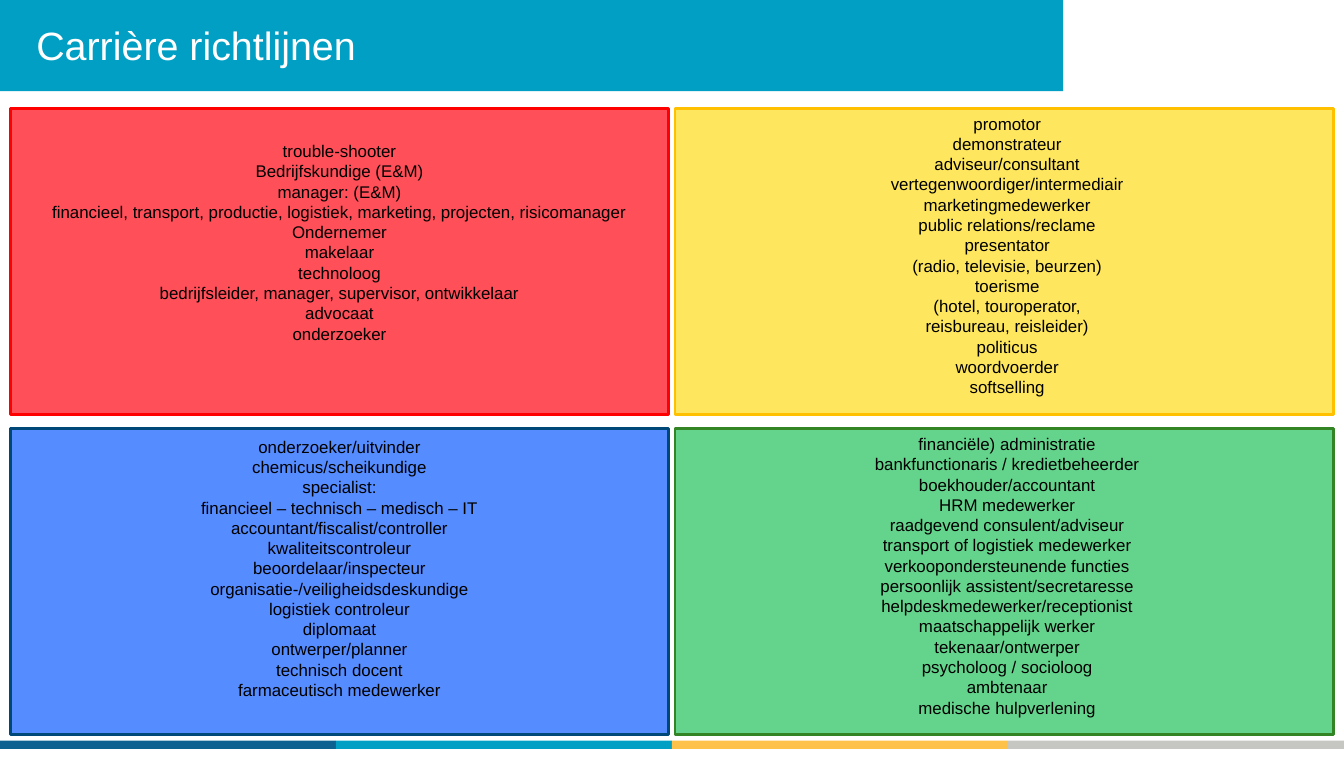
from pptx import Presentation
from pptx.dml.color import RGBColor
from pptx.enum.shapes import MSO_SHAPE as Preset
from pptx.enum.text import MSO_ANCHOR as Anchor, PP_ALIGN as Align
from pptx.util import Pt

WHITE = RGBColor(0xFF, 0xFF, 0xFF)
BLACK = RGBColor(0x00, 0x00, 0x00)
TEAL = RGBColor(0x00, 0x9F, 0xC3)
NAVY = RGBColor(0x0D, 0x61, 0x90)
AMBER = RGBColor(0xFE, 0xC2, 0x4A)
GRAY = RGBColor(0xC6, 0xC6, 0xC3)
RED_FILL = RGBColor(0xFF, 0x4F, 0x59)
RED_LINE = RGBColor(0xFF, 0x00, 0x00)
YELLOW_FILL = RGBColor(0xFE, 0xE7, 0x5E)
YELLOW_LINE = RGBColor(0xFF, 0xC0, 0x00)
BLUE_FILL = RGBColor(0x55, 0x8C, 0xFF)
BLUE_LINE = RGBColor(0x00, 0x48, 0x77)
GREEN_FILL = RGBColor(0x64, 0xD4, 0x8C)
GREEN_LINE = RGBColor(0x32, 0x84, 0x24)

FONT = "Arial"
SLIDE_WIDTH, SLIDE_HEIGHT = 954.72, 540
PANEL_WIDTH, PANEL_HEIGHT = 468, 217.5
LEFT_COLUMN, RIGHT_COLUMN = 7.2, 479.5
TOP_ROW, BOTTOM_ROW = 77, 304.6
LINE_PITCH = 14.4

RED_CAREERS = [
    "trouble-shooter",
    "Bedrijfskundige (E&M)",
    "manager: (E&M)",
    "financieel, transport, productie, logistiek, marketing, projecten, risicomanager",
    "Ondernemer",
    "makelaar",
    "technoloog",
    "bedrijfsleider, manager, supervisor, ontwikkelaar",
    "advocaat",
    "onderzoeker",
]
YELLOW_CAREERS = [
    "promotor",
    "demonstrateur",
    "adviseur/consultant",
    "vertegenwoordiger/intermediair",
    "marketingmedewerker",
    "public relations/reclame",
    "presentator",
    "(radio, televisie, beurzen)",
    "toerisme",
    "(hotel, touroperator,",
    "reisbureau, reisleider)",
    "politicus",
    "woordvoerder",
    "softselling",
]
BLUE_CAREERS = [
    "onderzoeker/uitvinder",
    "chemicus/scheikundige",
    "specialist:",
    "financieel – technisch – medisch – IT",
    "accountant/fiscalist/controller",
    "kwaliteitscontroleur",
    "beoordelaar/inspecteur",
    "organisatie-/veiligheidsdeskundige",
    "logistiek controleur",
    "diplomaat",
    "ontwerper/planner",
    "technisch docent",
    "farmaceutisch medewerker",
]
GREEN_CAREERS = [
    "financiële) administratie",
    "bankfunctionaris / kredietbeheerder",
    "boekhouder/accountant",
    "HRM medewerker",
    "raadgevend consulent/adviseur",
    "transport of logistiek medewerker",
    "verkoopondersteunende functies",
    "persoonlijk assistent/secretaresse",
    "helpdeskmedewerker/receptionist",
    "maatschappelijk werker",
    "tekenaar/ontwerper",
    "psycholoog / socioloog",
    "ambtenaar",
    "medische hulpverlening",
]

PANELS = [
    (LEFT_COLUMN, TOP_ROW, RED_FILL, RED_LINE, RED_CAREERS, 0, 19.5),
    (RIGHT_COLUMN, TOP_ROW, YELLOW_FILL, YELLOW_LINE, YELLOW_CAREERS, 2, 0),
    (RIGHT_COLUMN, BOTTOM_ROW, GREEN_FILL, GREEN_LINE, GREEN_CAREERS, 2, 0),
    (LEFT_COLUMN, BOTTOM_ROW, BLUE_FILL, BLUE_LINE, BLUE_CAREERS, 0, 2),
]


def add_rectangle(slide, left, top, width, height, fill, line=None):
    shape = slide.shapes.add_shape(
        Preset.RECTANGLE, Pt(left), Pt(top), Pt(width), Pt(height))
    shape.shadow.inherit = False
    shape.fill.solid()
    shape.fill.fore_color.rgb = fill
    if line is None:
        shape.line.fill.background()
    else:
        shape.line.color.rgb = line
        shape.line.width = Pt(2)


def add_text(slide, left, top, width, height, lines, size, color,
             align=Align.LEFT, anchor=Anchor.TOP, pitch=None):
    frame = slide.shapes.add_textbox(
        Pt(left), Pt(top), Pt(width), Pt(height)).text_frame
    frame.word_wrap = True
    frame.vertical_anchor = anchor
    for index, line in enumerate(lines):
        paragraph = frame.add_paragraph() if index else frame.paragraphs[0]
        paragraph.alignment = align
        if pitch:
            paragraph.line_spacing = Pt(pitch)
        run = paragraph.add_run()
        run.text = line
        run.font.name = FONT
        run.font.size = Pt(size)
        run.font.color.rgb = color


def add_footer_stripes(slide):
    colors = [NAVY, TEAL, AMBER, GRAY]
    width = SLIDE_WIDTH / len(colors)
    for index, color in enumerate(colors):
        add_rectangle(slide, index * width, 526.3, width, 5.8, color)


def add_panel(slide, left, top, fill, line, careers, shift, drop):
    add_rectangle(slide, left, top, PANEL_WIDTH, PANEL_HEIGHT, fill, line)
    add_text(slide, left + shift, top + drop, PANEL_WIDTH,
             len(careers) * LINE_PITCH + 7.2, careers, 12, BLACK,
             Align.CENTER, pitch=LINE_PITCH)


def main():
    presentation = Presentation()
    presentation.slide_width = Pt(SLIDE_WIDTH)
    presentation.slide_height = Pt(SLIDE_HEIGHT)
    slide = presentation.slides.add_slide(presentation.slide_layouts[6])
    add_footer_stripes(slide)
    add_rectangle(slide, 0, 0, 755.3, 64.8, TEAL)
    add_text(slide, 18.7, 10.1, 719.3, 43.9, ["Carrière richtlijnen"], 28,
             WHITE, anchor=Anchor.MIDDLE)
    for panel in PANELS:
        add_panel(slide, *panel)
    presentation.save("out.pptx")


if __name__ == "__main__":
    main()
